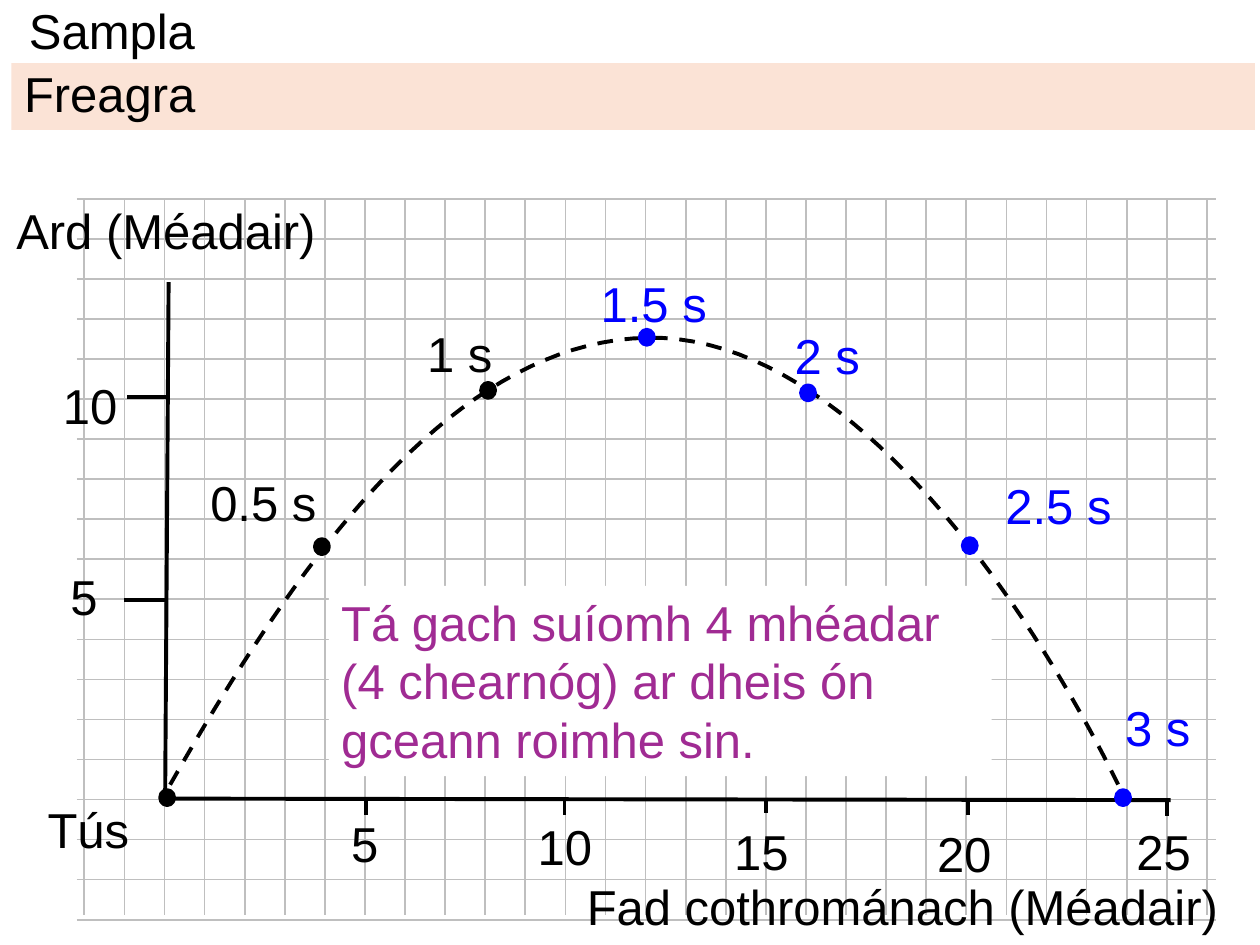
from dataclasses import dataclass

from lxml.etree import SubElement
from pptx import Presentation
from pptx.dml.color import RGBColor
from pptx.enum.dml import MSO_LINE_DASH_STYLE as Dash
from pptx.enum.shapes import MSO_CONNECTOR as Conn, MSO_SHAPE as Kind
from pptx.enum.text import MSO_ANCHOR as Anchor, MSO_AUTO_SIZE as Auto, PP_ALIGN as Align
from pptx.oxml.ns import qn
from pptx.util import Cm, Pt

HEX = {"ink": "000000", "blue": "0000FF", "grid": "BFBFBF",
       "band": "FBE3D6", "note": "A02B93", "white": "FFFFFF"}
Point = tuple[float, float]


@dataclass
class Label:
    text: str
    left: float
    top: float
    width: float
    color: str = "ink"


@dataclass
class Spot:
    """A place of the ball, with the time it gets there."""
    left: float
    top: float
    label: Label


@dataclass
class Tick:
    start: Point
    end: Point


LABELS = [
    Label("5", 6.83, 16.28, 1.07),
    Label("10", 10.59, 16.33, 1.63),
    Label("15", 14.55, 16.43, 1.63),
    Label("20", 18.64, 16.48, 1.63),
    Label("25", 22.66, 16.43, 1.63),
    Label("5", 1.17, 11.3, 1.07),
    Label("10", 1.02, 7.44, 1.63),
    Label("Ard (Méadair)", 0.08, 3.91, 6.63),
    Label("Fad cothrománach (Méadair)", 11.58, 17.55, 13.41),
]
SPOTS = [
    Spot(3.23, 15.93, Label("Tús", 0.71, 16, 2.18)),
    Spot(6.35, 10.87, Label("0.5 s", 3.99, 9.4, 2.67)),
    Spot(9.7, 7.72, Label("1 s", 8.36, 6.4, 1.85)),
    Spot(12.9, 6.65, Label("1.5 s", 11.86, 5.38, 2.67, "blue")),
    Spot(16.15, 7.77, Label("2 s", 15.77, 6.43, 1.85, "blue")),
    Spot(19.41, 10.85, Label("2.5 s", 20.02, 9.47, 2.67, "blue")),
    Spot(22.5, 15.93, Label("3 s", 22.43, 13.94, 1.85, "blue")),
]
FEET = [(7.37, 16.13), (11.38, 16.13), (15.44, 16.08), (19.51, 16.13), (23.52, 16.15)]
TICKS = [Tick((x, y), (x, y + 0.3)) for x, y in FEET] + [
    Tick((2.51, 12.09), (3.33, 12.09)), Tick((2.57, 8), (3.35, 8))]
AXES = [(3.4, 5.69), (3.33, 16.1), (23.6, 16.13)]
ARCS = [
    ((3.43, 15.82), (5.69, 11.86), (8.92, 6.88), (13.06, 6.81)),
    ((13.06, 6.81), (17.2, 6.73), (20.96, 12.5), (22.68, 16.1)),
]


def paint(name: str) -> RGBColor:
    return RGBColor.from_string(HEX[name])


def fill(shape, name: str) -> None:
    shape.fill.solid()
    shape.fill.fore_color.rgb = paint(name)


def stroke(shape, name: str, width: float = 2.25) -> None:
    shape.line.color.rgb = paint(name)
    shape.line.width = Pt(width)


def write(shape, text: str, color: str = "ink"):
    para = shape.text_frame.paragraphs[0]
    para.text = text
    para.alignment = Align.LEFT
    para.font.name, para.font.size = "Arial", Pt(28)
    para.font.color.rgb = paint(color)
    return para


def draw_line(shapes, start: Point, end: Point, color: str, width: float) -> None:
    line = shapes.add_connector(Conn.STRAIGHT, *map(Cm, start + end))
    stroke(line, color, width)
    SubElement(line._element.spPr, qn("a:effectLst"))


def draw_grid(shapes) -> None:
    left, right, cols = 1.7, 24.33, 28
    top, foot, rows = 4.01, 18.54, 18
    group = shapes.add_group_shape().shapes
    for i in range(cols + 1):
        x = left + i * (right - left) / cols
        draw_line(group, (x, top), (x, 18.44), "grid", 1)
    for i in range(rows + 1):
        y = top + i * (foot - top) / rows
        draw_line(group, (1.55, y), (24.51, y), "grid", 1)


def draw_path(shapes, points: list[Point]):
    """Draw an open outline through the points."""
    spots = [(Cm(x), Cm(y)) for x, y in points]
    pen = shapes.build_freeform(*spots[0])
    pen.add_line_segments(spots[1:], close=False)
    path = pen.convert_to_shape()
    path.fill.background()
    path.shadow.inherit = False
    stroke(path, "ink")
    return path


def bend(arc: tuple[Point, ...], steps: int = 40) -> list[Point]:
    """Points along a cubic Bézier curve."""
    def at(t: float) -> Point:
        parts = ((1 - t) ** 3, 3 * t * (1 - t) ** 2, 3 * t * t * (1 - t), t ** 3)
        return (sum(w * p[0] for w, p in zip(parts, arc)),
                sum(w * p[1] for w, p in zip(parts, arc)))
    return [at(i / steps) for i in range(steps + 1)]


def draw_label(shapes, label: Label) -> None:
    box = shapes.add_textbox(Cm(label.left), Cm(label.top), Cm(label.width), Cm(1.45))
    box.text_frame.word_wrap = False
    write(box, label.text, label.color)


def draw_spot(shapes, spot: Spot) -> None:
    dot = shapes.add_shape(Kind.OVAL, Cm(spot.left), Cm(spot.top), Cm(0.28), Cm(0.3))
    dot.shadow.inherit = False
    fill(dot, spot.label.color)
    stroke(dot, spot.label.color)
    draw_label(shapes, spot.label)


def draw_note(shapes) -> None:
    note = shapes.add_shape(Kind.RECTANGLE, Cm(6.63), Cm(11.81), Cm(13.36), Cm(3.84))
    note.shadow.inherit = False
    fill(note, "white")
    note.line.fill.background()
    note.text_frame.word_wrap = True
    note.text_frame.vertical_anchor = Anchor.TOP
    write(note, "Tá gach suíomh 4 mhéadar (4 chearnóg) ar dheis ón gceann roimhe sin.", "note")


def set_holder(shape, text: str, left: float, top: float, width: float):
    """Move a placeholder and fill in its one line of text."""
    shape.left, shape.top, shape.width, shape.height = map(Cm, (left, top, width, 1.35))
    shape.text_frame.auto_size = Auto.NONE
    shape.text_frame.vertical_anchor = Anchor.MIDDLE
    para = write(shape, text)
    para.line_spacing, para.space_before = 0.9, Pt(0)
    return para


def main() -> None:
    deck = Presentation()
    deck.slide_width, deck.slide_height = Cm(25.4), Cm(19.05)
    slide = deck.slides.add_slide(deck.slide_layouts[1])
    shapes = slide.shapes
    set_holder(shapes.title, "Sampla", 0.33, 0, 18.36)
    body = slide.placeholders[1]
    props = set_holder(body, "Freagra", 0.23, 1.27, 25.07)._p.get_or_add_pPr()
    props.set("marL", "0")
    props.set("indent", "0")
    SubElement(props, qn("a:buNone"))
    # the schema wants buNone ahead of the default run properties
    props.extend(props.findall(qn("a:defRPr")))
    fill(body, "band")

    draw_grid(shapes)
    curve = draw_path(shapes, bend(ARCS[0]) + bend(ARCS[1])[1:])
    curve.line.dash_style = Dash.DASH
    draw_path(shapes, AXES)
    for tick in TICKS:
        draw_line(shapes, tick.start, tick.end, "ink", 2.25)
    for label in LABELS:
        draw_label(shapes, label)
    for spot in SPOTS:
        draw_spot(shapes, spot)
    draw_note(shapes)
    deck.save("out.pptx")


if __name__ == "__main__":
    main()
